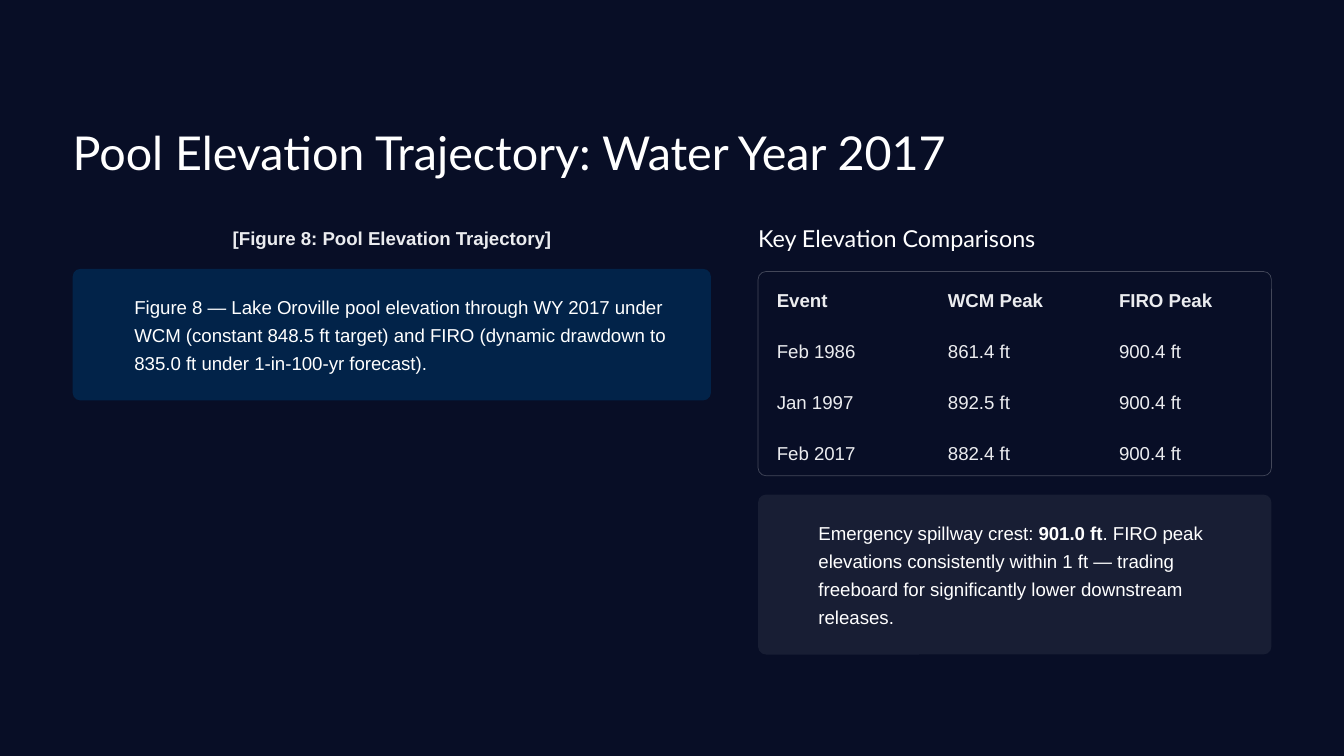
from pptx import Presentation
from pptx.dml.color import RGBColor
from pptx.enum.shapes import MSO_SHAPE
from pptx.enum.text import MSO_ANCHOR, MSO_AUTO_SIZE, PP_ALIGN
from pptx.oxml.ns import qn
from pptx.util import Inches, Pt
from lxml import etree

ROUNDED = MSO_SHAPE.ROUNDED_RECTANGLE
TOP = MSO_ANCHOR.TOP
NO_AUTOFIT = MSO_AUTO_SIZE.NONE
LEFT, CENTER = PP_ALIGN.LEFT, PP_ALIGN.CENTER
TITLE_ONLY = 5

LEFT_X, LEFT_W = 0.54, 4.75
RIGHT_X, RIGHT_W = 5.64, 3.82
CORNER = 0.06
ROWS = [
    ("Event", "WCM Peak", "FIRO Peak"),
    ("Feb 1986", "861.4 ft", "900.4 ft"),
    ("Jan 1997", "892.5 ft", "900.4 ft"),
    ("Feb 2017", "882.4 ft", "900.4 ft"),
]


def color(hex_string):
    return RGBColor.from_string(hex_string)


class SlideBuilder:
    heading_font, body_font = "Lato", "Arial"
    background, white, soft_white = "080E26", "FFFFFF", "EBECEF"

    def __init__(self, deck):
        self.page = deck.slides.add_slide(deck.slide_layouts[TITLE_ONLY])
        fill = self.page.background.fill
        fill.solid()
        fill.fore_color.rgb = color(self.background)

    def style(self, para, size=10, spacing=15, font=body_font, ink=white,
              bold=False, align=LEFT):
        para.alignment = align
        para.line_spacing = Pt(spacing)
        para.font.name = font
        para.font.size = Pt(size)
        para.font.bold = bold
        para.font.color.rgb = color(ink)

    def fill_frame(self, box, spans, **style):
        """Write one paragraph; every second span is bold."""
        frame = box.text_frame
        frame.word_wrap = True
        frame.auto_size = NO_AUTOFIT
        frame.vertical_anchor = TOP
        frame.margin_left = frame.margin_right = 0
        frame.margin_top = frame.margin_bottom = 0
        para = frame.paragraphs[0]
        self.style(para, **style)
        for index, words in enumerate(spans):
            span = para.add_run()
            span.text = words
            if index % 2:
                span.font.bold = True

    def title(self, x, y, w, h, words):
        box = self.page.shapes.title
        box.left, box.top, box.width, box.height = map(Inches, (x, y, w, h))
        self.fill_frame(box, [words], size=25, spacing=31, font=self.heading_font)

    def text(self, x, y, w, h, *spans, **style):
        box = self.page.shapes.add_textbox(*map(Inches, (x, y, w, h)))
        self.fill_frame(box, spans, **style)

    def panel(self, x, y, w, h, fill=None):
        """Add a rounded card: filled, or with a faint outline only."""
        card = self.page.shapes.add_shape(ROUNDED, *map(Inches, (x, y, w, h)))
        card.shadow.inherit = False
        card.adjustments[0] = CORNER / h
        if fill:
            card.fill.solid()
            card.fill.fore_color.rgb = color(fill)
            card.line.fill.background()
            return
        card.fill.background()
        card.line.width = Pt(0.38)
        card.line.color.rgb = color(self.white)
        line_color = card.line._ln.find(".//" + qn("a:srgbClr"))
        etree.SubElement(line_color, qn("a:alpha"), val="24000")

    def table(self, x, y, w, h, rows):
        grid = self.page.shapes.add_table(
            len(rows), len(rows[0]), *map(Inches, (x, y, w, h))).table
        grid.horz_banding = False
        for r, row in enumerate(rows):
            for c, words in enumerate(row):
                cell = grid.cell(r, c)
                cell.margin_left, cell.margin_right = Inches(0.14), 0
                cell.margin_top, cell.margin_bottom = Inches(0.09), Inches(0.07)
                properties = cell._tc.get_or_add_tcPr()
                for side in ("lnL", "lnR", "lnT", "lnB"):
                    border = etree.SubElement(properties, qn("a:" + side), w="0")
                    etree.SubElement(border, qn("a:noFill"))
                cell.fill.background()
                cell.text = words
                self.style(cell.text_frame.paragraphs[0],
                           ink=self.soft_white, bold=r == 0)


def main():
    deck = Presentation()
    deck.slide_width = Inches(10)
    deck.slide_height = deck.slide_width * 9 // 16
    slide = SlideBuilder(deck)

    slide.title(LEFT_X, 0.91, 7.08, 0.44, "Pool Elevation Trajectory: Water Year 2017")

    slide.text(LEFT_X, 1.65, LEFT_W, 0.21, "[Figure 8: Pool Elevation Trajectory]",
               ink=slide.soft_white, bold=True, align=CENTER)
    slide.panel(LEFT_X, 2, LEFT_W, 0.98, fill="022349")
    slide.text(1, 2.16, 4.16, 0.64,
               "Figure 8 — Lake Oroville pool elevation through WY 2017 under WCM "
               "(constant 848.5 ft target) and FIRO (dynamic drawdown to 835.0 ft "
               "under 1-in-100-yr forecast).")

    slide.text(RIGHT_X, 1.66, 2.29, 0.22, "Key Elevation Comparisons",
               size=12.5, spacing=15.5, font=slide.heading_font)
    slide.panel(RIGHT_X, 2.02, RIGHT_W, 1.52)
    slide.table(RIGHT_X, 2.02, RIGHT_W, 1.52, ROWS)
    slide.panel(RIGHT_X, 3.68, RIGHT_W, 1.19, fill="181E34")
    slide.text(6.09, 3.84, 3.23, 0.85,
               "Emergency spillway crest: ", "901.0 ft",
               ". FIRO peak elevations consistently within 1 ft — trading freeboard "
               "for significantly lower downstream releases.")

    deck.save("out.pptx")


if __name__ == "__main__":
    main()
